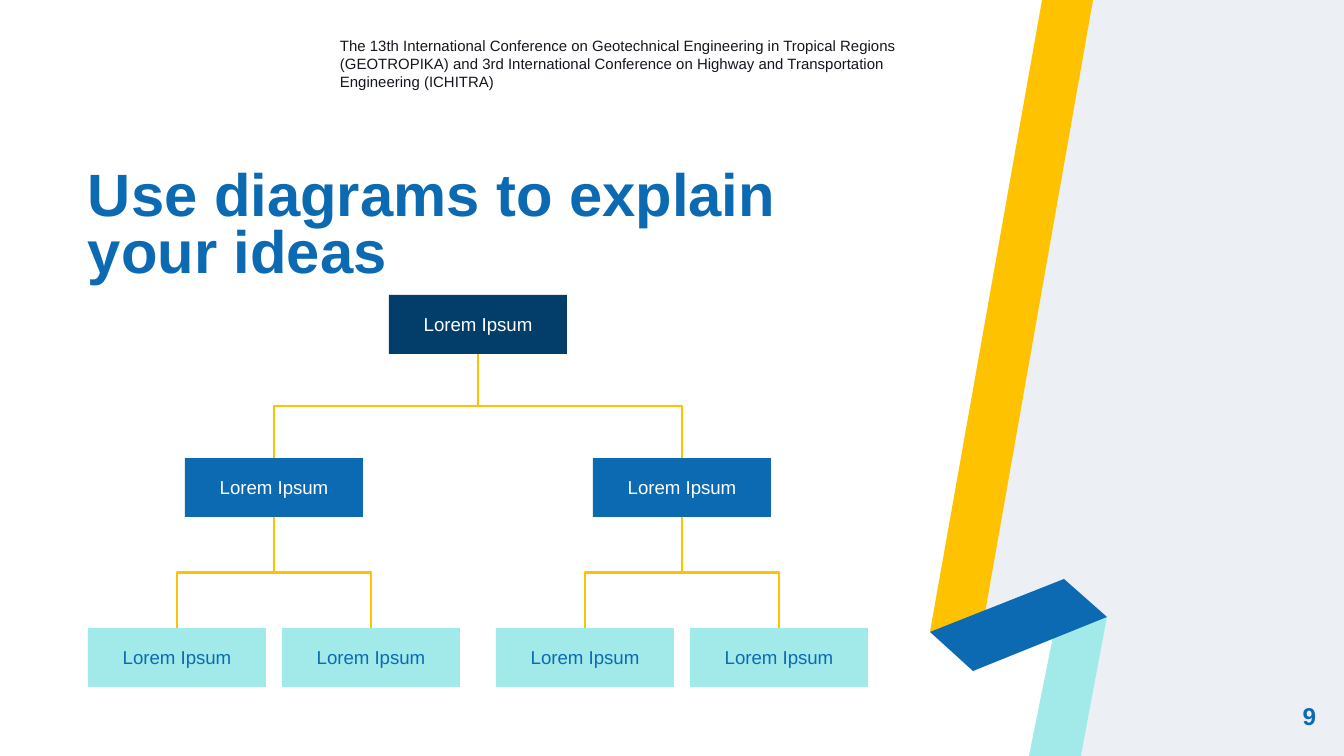
"""Build a slide with a three-level organisation diagram beside a folded ribbon."""
from dataclasses import dataclass

from lxml.etree import SubElement
from pptx import Presentation
from pptx.dml.color import RGBColor
from pptx.enum.shapes import MSO_CONNECTOR as Link, MSO_SHAPE as Preset
from pptx.enum.text import MSO_ANCHOR as Anchor, MSO_AUTO_SIZE as AutoSize, PP_ALIGN as Align
from pptx.oxml.ns import qn
from pptx.util import Pt


@dataclass(frozen=True)
class Theme:
    font: str = "Arial"
    white: str = "FFFFFF"
    ink: str = "13171D"
    navy: str = "023E69"
    blue: str = "0B6AB1"
    aqua: str = "A2EAE9"
    yellow: str = "FEC200"
    mist: str = "ECEFF3"
    header_size: int = 8
    box_size: int = 10
    number_size: int = 13
    title_size: int = 32
    line_width: float = 1.5


THEME = Theme()
SCALE = 914400 / 134.4
SLIDE = (1344, 756)

TITLE = "Use diagrams to explain your ideas"
HEADER = ("The 13th International Conference on Geotechnical Engineering in Tropical Regions "
          "(GEOTROPIKA) and 3rd International Conference on Highway and Transportation "
          "Engineering (ICHITRA)")
NUMBER = "9"
TREE = ("Lorem Ipsum", [
    ("Lorem Ipsum", [("Lorem Ipsum", []), ("Lorem Ipsum", [])]),
    ("Lorem Ipsum", [("Lorem Ipsum", []), ("Lorem Ipsum", [])]),
])

BOX = (178, 59)
ROOT_CENTRE = 478
LEVELS = [
    {"top": 295, "spread": 204, "fill": THEME.navy, "color": THEME.white},
    {"top": 458, "spread": 97, "fill": THEME.blue, "color": THEME.white},
    {"top": 628, "spread": 0, "fill": THEME.aqua, "color": THEME.blue},
]
RIBBON = [
    (THEME.mist, [(1093, 0), (985, 610), (1064, 579), (1107, 617), (1081, 756), (1344, 756), (1344, 0)]),
    (THEME.yellow, [(1042, 0), (1093, 0), (985, 613), (930, 632)]),
    (THEME.aqua, [(1029, 756), (1053, 637), (1107, 617), (1081, 756)]),
    (THEME.blue, [(930, 632), (1064, 579), (1107, 617), (973, 671)]),
]


def px(value):
    return round(value * SCALE)


def place(shape, left, top, width, height):
    shape.left, shape.top = px(left), px(top)
    shape.width, shape.height = px(width), px(height)


def paint(shape, color):
    shape.shadow.inherit = False
    shape.fill.solid()
    shape.fill.fore_color.rgb = RGBColor.from_string(color)
    shape.line.fill.background()


def write(shape, text, *, size, color, bold=False, align=Align.LEFT,
          anchor=Anchor.TOP, inset=0, spacing=None):
    frame = shape.text_frame
    frame.word_wrap = True
    frame.auto_size = AutoSize.NONE
    frame.vertical_anchor = anchor
    frame.margin_left = frame.margin_right = px(inset)
    frame.margin_top = frame.margin_bottom = px(inset)
    para = frame.paragraphs[0]
    para.alignment = align
    if spacing:
        para.line_spacing = spacing
    span = para.add_run()
    span.text = text
    span.font.name = THEME.font
    span.font.size = Pt(size)
    span.font.bold = bold
    span.font.color.rgb = RGBColor.from_string(color)


def add_ribbon(page):
    for color, points in RIBBON:
        corners = [(px(x), px(y)) for x, y in points]
        builder = page.shapes.build_freeform(*corners[0])
        builder.add_line_segments(corners[1:], close=True)
        paint(builder.convert_to_shape(), color)


def join(page, parent, child):
    x1, y1 = parent.left + parent.width // 2, parent.top + parent.height
    x2, y2 = child.left + child.width // 2, child.top
    link = page.shapes.add_connector(Link.ELBOW, x1, y1, x2, y2)
    link.begin_connect(parent, 2)
    link.end_connect(child, 0)
    link.line.color.rgb = RGBColor.from_string(THEME.yellow)
    link.line.width = Pt(THEME.line_width)
    properties = link._element.spPr
    SubElement(properties, qn("a:effectLst"))

    drop, run = y2 - y1, abs(x2 - x1)
    link.left, link.top = (x1 + x2 - drop) // 2, (y1 + y2 - run) // 2
    link.width, link.height = drop, run
    frame = properties.find(qn("a:xfrm"))
    goes_right = x2 > x1
    frame.set("rot", "16200000" if goes_right else "5400000")
    frame.set("flipH", "1" if goes_right else "0")


def add_branch(page, node, centre, depth=0):
    label, children = node
    level = LEVELS[depth]
    box = page.shapes.add_shape(Preset.RECTANGLE, 0, 0, 0, 0)
    place(box, centre - BOX[0] // 2, level["top"], *BOX)
    paint(box, level["fill"])
    write(box, label, size=THEME.box_size, color=level["color"],
          align=Align.CENTER, anchor=Anchor.MIDDLE, inset=13)
    for side, child in zip((-1, 1), children):
        join(page, box, add_branch(page, child, centre + side * level["spread"], depth + 1))
    return box


def add_label(page, text, area, **style):
    box = page.shapes.add_textbox(0, 0, 0, 0)
    place(box, *area)
    write(box, text, **style)


def main():
    deck = Presentation()
    deck.slide_width, deck.slide_height = map(px, SLIDE)
    page = deck.slides.add_slide(deck.slide_layouts[5])
    add_ribbon(page)
    add_label(page, HEADER, (340, 37, 628, 58), size=THEME.header_size, color=THEME.ink)
    add_label(page, NUMBER, (1235, 687, 81, 58), size=THEME.number_size, color=THEME.blue,
              bold=True, align=Align.RIGHT, anchor=Anchor.MIDDLE)
    place(page.shapes.title, 88, 155, 776, 130)
    write(page.shapes.title, TITLE, size=THEME.title_size, color=THEME.blue,
          bold=True, anchor=Anchor.BOTTOM, spacing=0.8)
    add_branch(page, TREE, ROOT_CENTRE)
    deck.save("out.pptx")


if __name__ == "__main__":
    main()
